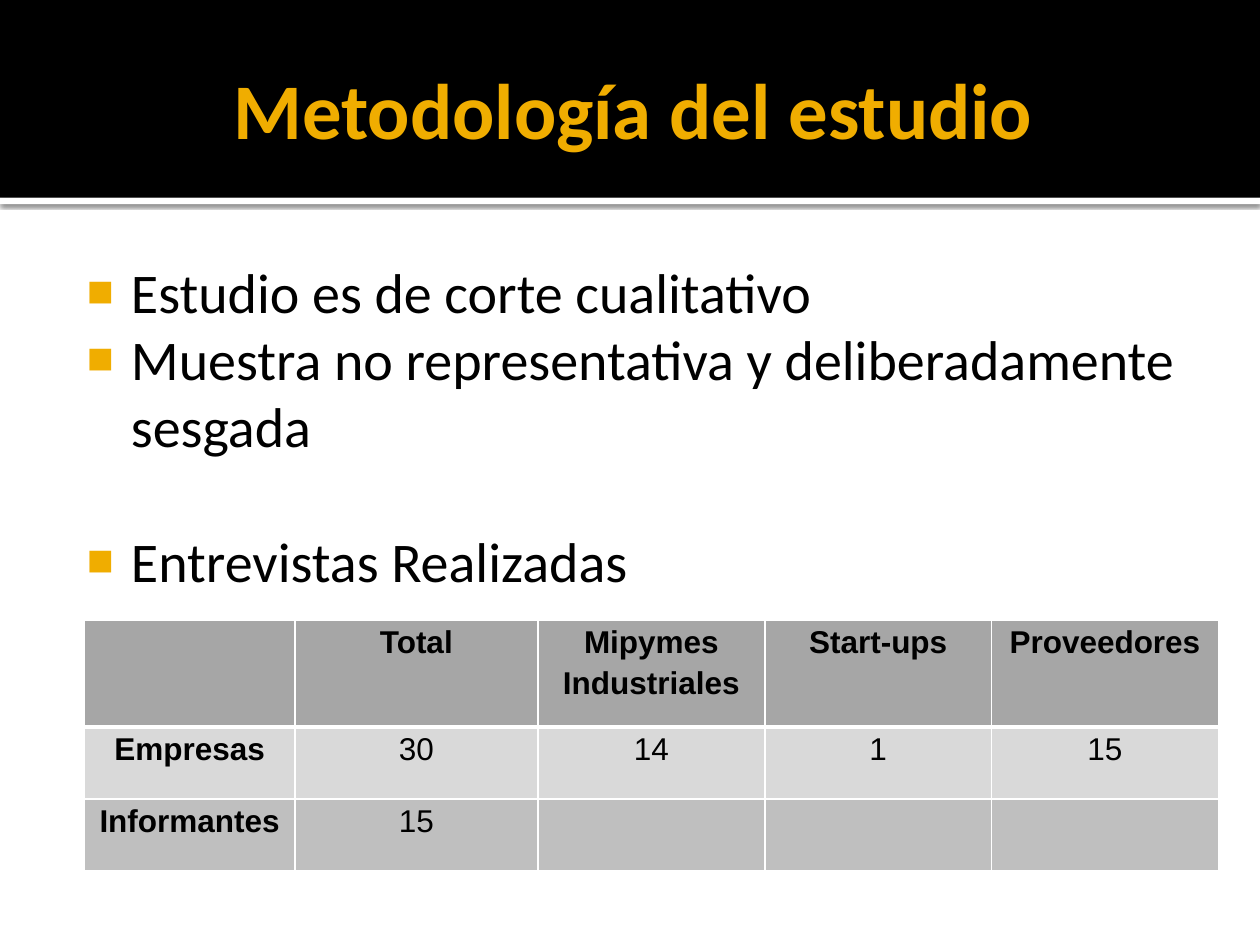
import pptx
import pptx.chart.data
import pptx.dml.color
import pptx.enum.shapes
import pptx.enum.text
import pptx.oxml
import pptx.oxml.ns
import pptx.util
from lxml import etree

Inches = pptx.util.Inches
Pt = pptx.util.Pt
CENTER = pptx.enum.text.PP_ALIGN.CENTER
GOLD, BLACK, WHITE = "F0AD00", "000000", "FFFFFF"
HEADINGS = ["", "Total", "Mipymes Industriales", "Start-ups", "Proveedores"]
INTERVIEWS = [
    HEADINGS,
    ["Empresas", "30", "14", "1", "15"],
    ["Informantes", "15", "", "", ""],
]
ROW_FILLS = ["A6A6A6", "D9D9D9", "BFBFBF"]
POINTS = [
    ("Estudio es de corte cualitativo", 0),
    ("Muestra no representativa y deliberadamente sesgada", 0),
    ("Entrevistas Realizadas", 39),
]


def color(value):
    """Return the RGB colour for a hex string."""
    return pptx.dml.color.RGBColor.from_string(value)


def add_xml(parent, markup):
    """Append a DrawingML fragment to an element."""
    namespace = pptx.oxml.ns.nsdecls("a")
    tag, rest = markup[:markup.index(" ")], markup[markup.index(" "):]
    parent.append(pptx.oxml.parse_xml(f"{tag} {namespace}{rest}"))


def style_run(paragraph, font_name, size, font_color, bold=False):
    """Format every run of a paragraph."""
    for run in paragraph.runs:
        run.font.name = font_name
        run.font.size = Pt(size)
        run.font.bold = bold
        run.font.color.rgb = color(font_color)


def set_margins(target, left, top, right, bottom):
    """Set the inner margins of a text frame or cell in inches."""
    target.margin_left, target.margin_top = Inches(left), Inches(top)
    target.margin_right, target.margin_bottom = Inches(right), Inches(bottom)


def add_band(slide, left, top, width, height, fill):
    """Add a plain rectangle without outline."""
    band = slide.shapes.add_shape(
        pptx.enum.shapes.MSO_SHAPE.RECTANGLE,
        Inches(left), Inches(top), Inches(width), Inches(height))
    band.shadow.inherit = False
    band.fill.solid()
    band.fill.fore_color.rgb = color(fill)
    band.line.fill.background()
    return band


def add_text_frame(slide, left, top, width, height):
    """Add a wrapping text box and return its frame."""
    frame = slide.shapes.add_textbox(
        Inches(left), Inches(top), Inches(width), Inches(height)).text_frame
    frame.word_wrap = True
    return frame


def add_header(slide, left, top, width, height):
    """Place the black header, its shadowed rule and the title."""
    rule = add_band(slide, left, top + height, width, 0.05, WHITE)
    effects = rule._element.spPr.find(pptx.oxml.ns.qn("a:effectLst"))
    add_xml(effects,
            f'<a:outerShdw blurRad="{Pt(2.5)}" dist="{Pt(0.8)}" dir="5400000" '
            'algn="tl" rotWithShape="0"><a:srgbClr val="000000">'
            '<a:alpha val="60000"/></a:srgbClr></a:outerShdw>')
    add_band(slide, left, top, width, height, BLACK)
    title = add_text_frame(slide, left + 0.5, top + 0.17, width - 1, height - 0.2)
    set_margins(title, 0.1, 0.05, 0.05, 0.05)
    title.vertical_anchor = pptx.enum.text.MSO_ANCHOR.MIDDLE
    title.text = "Metodología del estudio"
    title.paragraphs[0].alignment = CENTER
    style_run(title.paragraphs[0], "Calibri", 45, GOLD, True)


def add_points(slide, left, top, width, height):
    """Place the bulleted points of the study."""
    body = add_text_frame(slide, left, top, width, height)
    set_margins(body, 0.06, 0.1, 0.1, 0.05)
    body.text = "\n".join(text for text, _ in POINTS)
    for paragraph, (_, gap) in zip(body.paragraphs, POINTS):
        paragraph.space_before = Pt(gap)
        style_run(paragraph, "Calibri", 32, BLACK)
        properties = paragraph._p.get_or_add_pPr()
        properties.set("marL", str(Inches(0.48)))
        properties.set("indent", str(Inches(-0.35)))
        add_xml(properties, f'<a:buClr ><a:srgbClr val="{GOLD}"/></a:buClr>')
        add_xml(properties, '<a:buSzPct val="80000"/>')
        add_xml(properties, '<a:buFont typeface="Arial"/>')
        add_xml(properties, '<a:buChar char="■"/>')


def style_cell(cell, text, fill, bold, top_line, bottom_line):
    """Fill, border and write one table cell."""
    properties = cell._tc.get_or_add_tcPr()
    for side, weight in zip("LRTB", (1, 1, top_line, bottom_line)):
        add_xml(properties,
                f'<a:ln{side} w="{Pt(weight)}"><a:solidFill>'
                f'<a:srgbClr val="{WHITE}"/></a:solidFill></a:ln{side}>')
    cell.fill.solid()
    cell.fill.fore_color.rgb = color(fill)
    set_margins(cell, 0.07, 0, 0.07, 0)
    if text:
        cell.text = text
        paragraph = cell.text_frame.paragraphs[0]
        paragraph.alignment = CENTER
        paragraph.line_spacing = 1.15
        paragraph.space_before = paragraph.space_after = Pt(2)
        style_run(paragraph, "Arial", 18, BLACK, bold)


def add_interviews(slide, left, top, width, height):
    """Place the table of interviews."""
    table = slide.shapes.add_table(
        len(INTERVIEWS), len(HEADINGS),
        Inches(left), Inches(top), Inches(width), Inches(height)).table
    for column, share in zip(table.columns, (1.67, 1.93, 1.8, 1.8, 1.8)):
        column.width = Inches(share)
    for row, row_height in zip(table.rows, (0.85, 0.57, 0.57)):
        row.height = Inches(row_height)
    for r, values in enumerate(INTERVIEWS):
        for c, text in enumerate(values):
            style_cell(table.cell(r, c), text, ROW_FILLS[r], r == 0 or c == 0,
                       3 if r == 1 else 1, 3 if r == 0 else 1)


def main():
    """Build and save the slide."""
    deck = pptx.Presentation()
    deck.slide_width, deck.slide_height = Inches(10), Inches(7.5)
    slide = deck.slides.add_slide(deck.slide_layouts[6])
    add_header(slide, 0, 0, 10, 1.57)
    add_points(slide, 0.5, 1.94, 9, 5.06)
    add_interviews(slide, 0.67, 4.92, 9, 1.99)
    deck.save("out.pptx")


if __name__ == "__main__":
    main()
